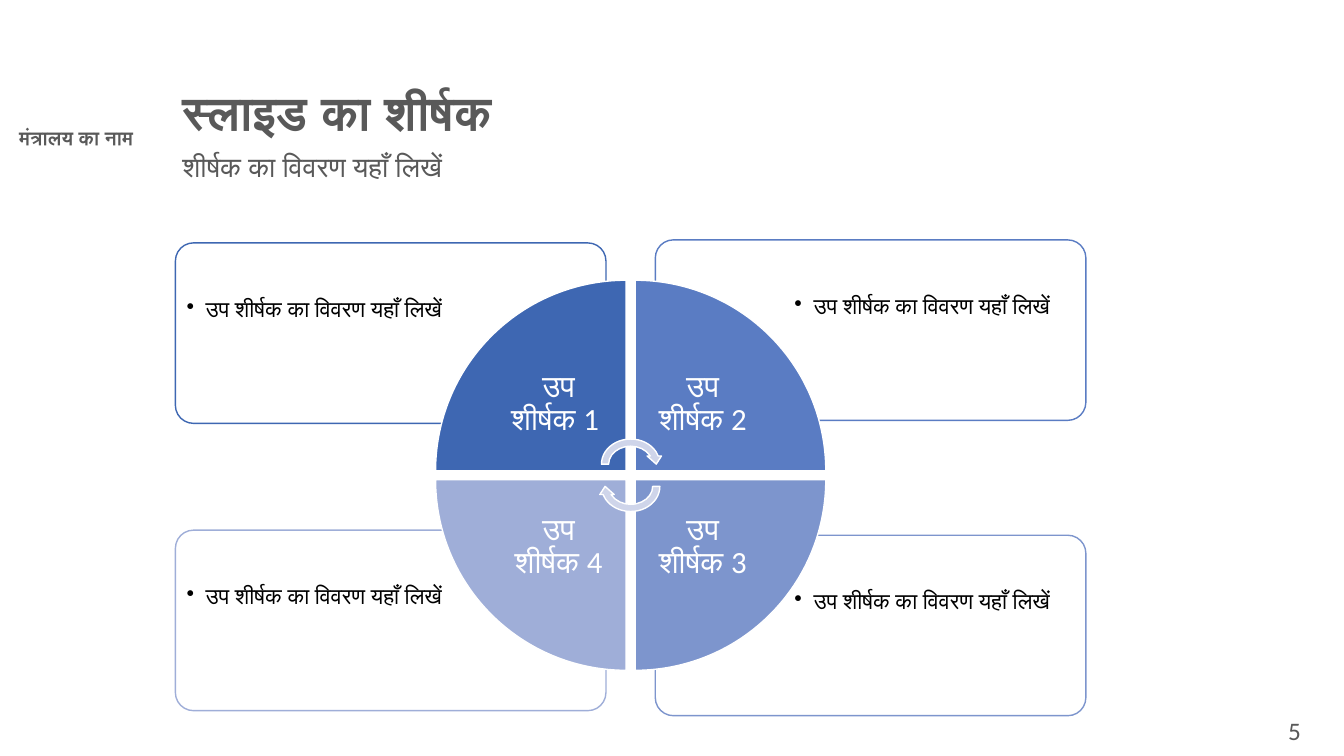
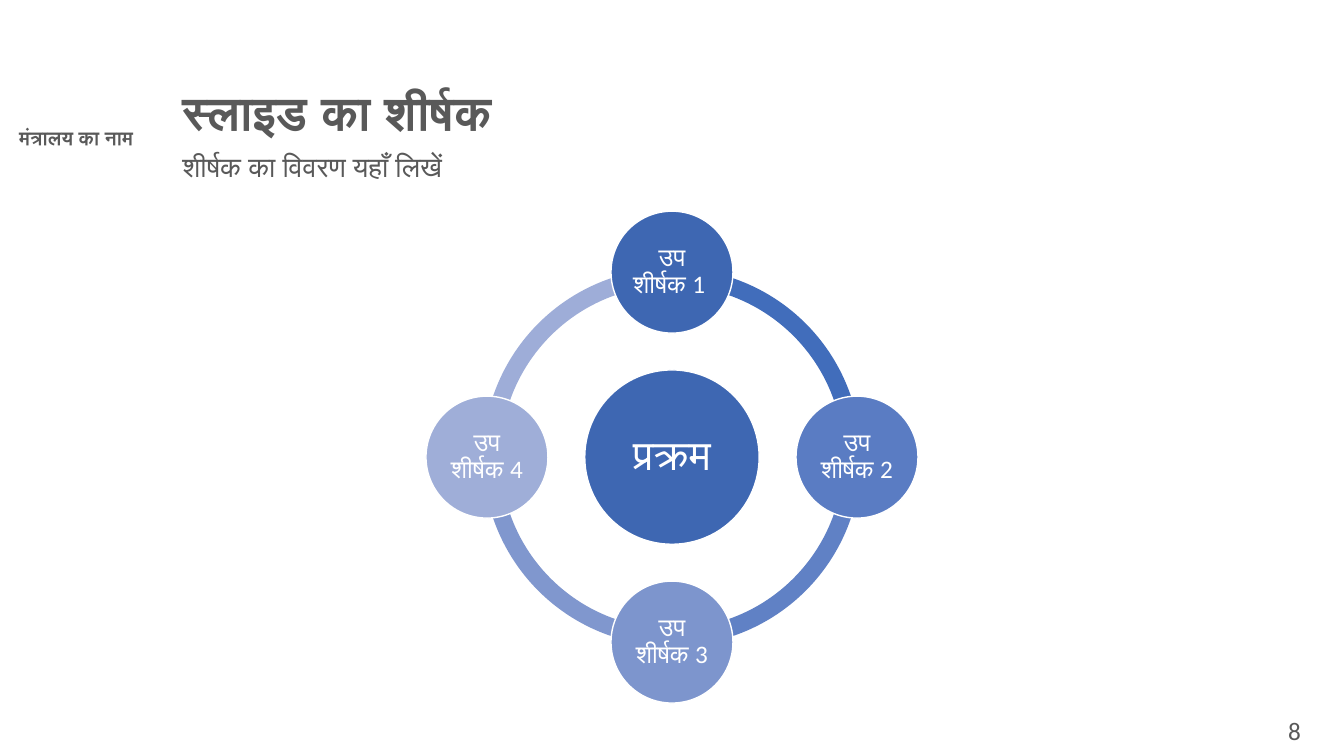
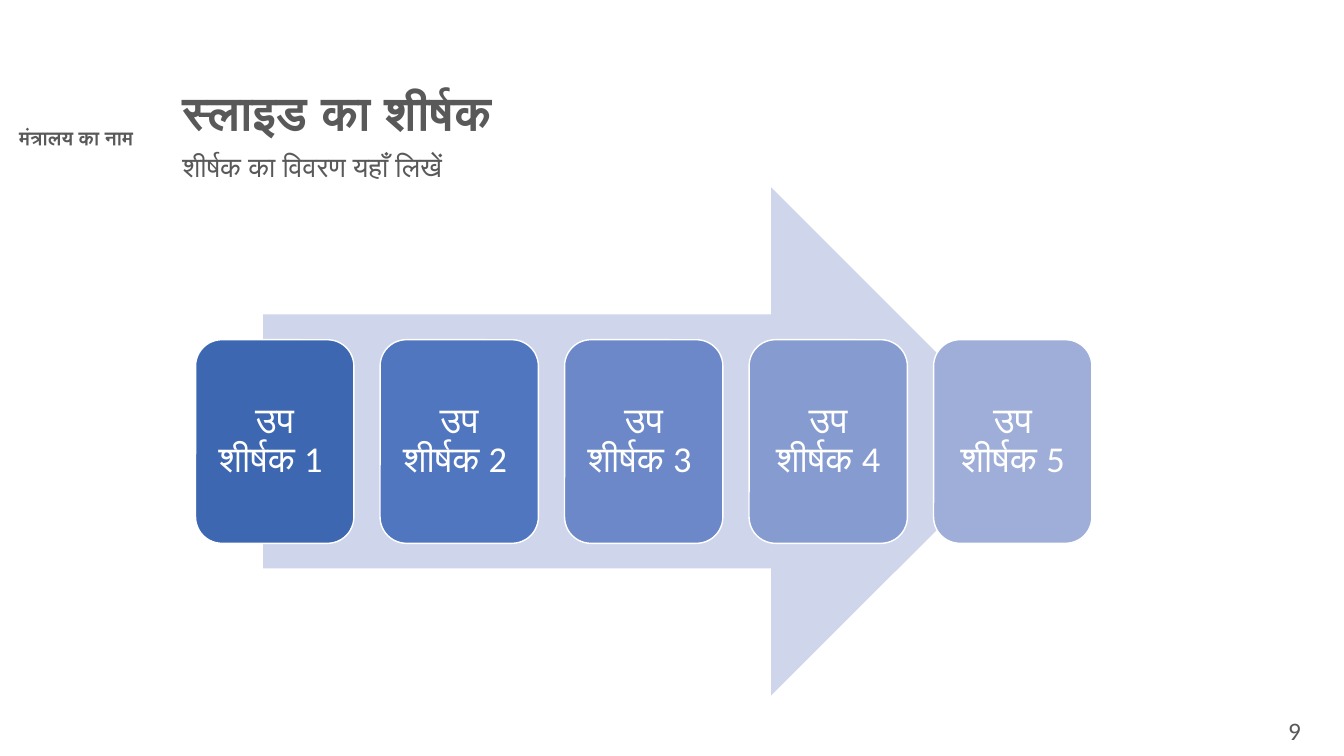
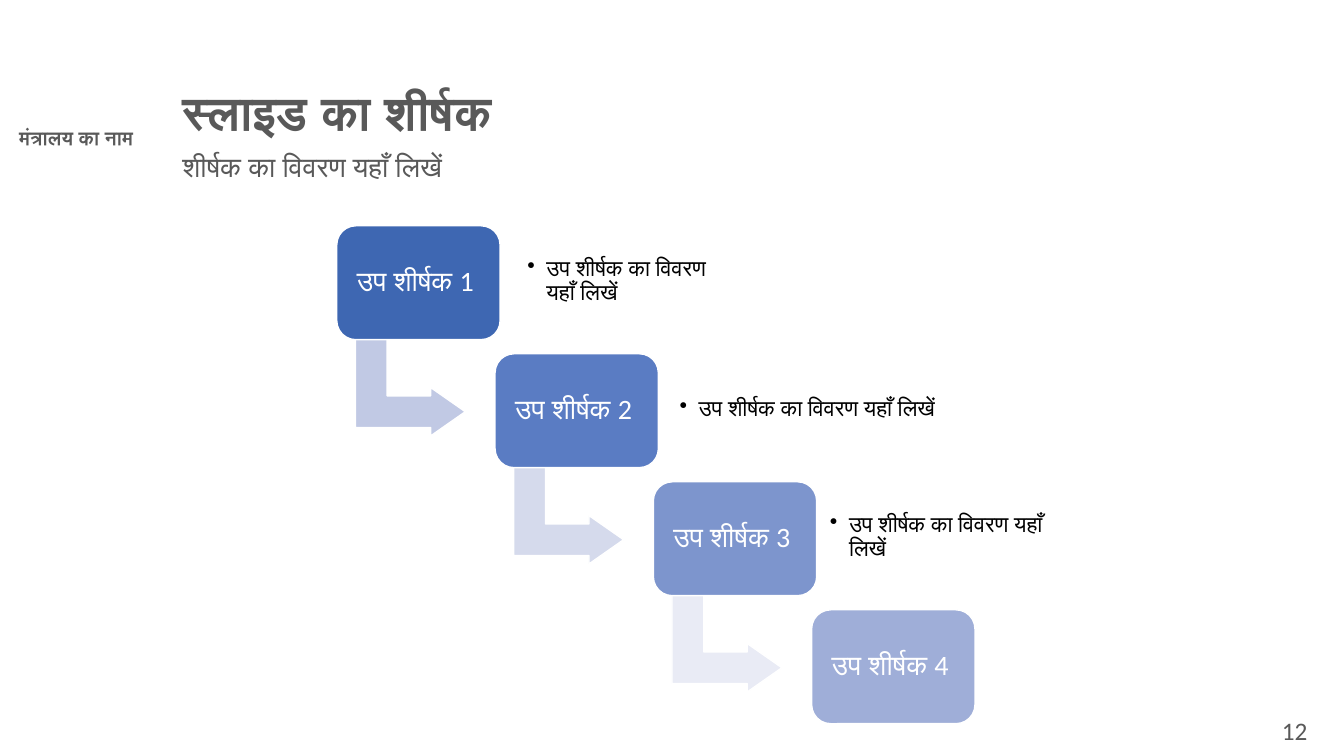
from dataclasses import dataclass
from typing import Optional

from lxml.etree import SubElement
from pptx import Presentation
from pptx.dml.color import RGBColor
from pptx.enum.shapes import MSO_SHAPE
from pptx.enum.text import MSO_ANCHOR, PP_ALIGN
from pptx.oxml.ns import qn
from pptx.shapes.autoshape import Shape
from pptx.slide import Slide
from pptx.util import Inches, Pt

# Shared colours
GREY = RGBColor(0x59, 0x59, 0x59)
BLACK = RGBColor(0x00, 0x00, 0x00)
WHITE = RGBColor(0xFF, 0xFF, 0xFF)
PALE = RGBColor(0xCF, 0xD5, 0xEA)
FOUR_BLUES = [RGBColor.from_string(code) for code in ("3E67B2", "5A7CC3", "7D95CD", "9FAED8")]
FIVE_BLUES = [RGBColor.from_string(code) for code in ("3E67B2", "5176C0", "6C88C8", "869BD0", "9FAED8")]
ARC_BLUES = [RGBColor.from_string(code) for code in ("416DBB", "6081C5", "8097CE", "9EADD8")]
ARROW_BLUES = [RGBColor.from_string(code) for code in ("C1C9E4", "D5DAEC", "E9EBF5")]

# Shared wording
MINISTRY = "मंत्रालय का नाम"
TITLE = "स्लाइड का शीर्षक"
SUBTITLE = "शीर्षक का विवरण यहाँ लिखें"
DETAIL = "उप शीर्षक का विवरण यहाँ लिखें"
HEADING = "उप शीर्षक"


@dataclass(frozen=True)
class Frame:
    """Left, top, width and height in inches."""
    left: float
    top: float
    width: float
    height: float

    def lengths(self) -> list[int]:
        return [Inches(side) for side in (self.left, self.top, self.width, self.height)]


@dataclass(frozen=True)
class DetailCard:
    card: Frame
    text: Frame
    anchor: MSO_ANCHOR


def write(box: Shape, text: str, *, size: float, color: RGBColor = WHITE, font: str = "Calibri",
          bold: bool = False, align: PP_ALIGN = PP_ALIGN.CENTER, spacing: float = 0.9,
          anchor: MSO_ANCHOR = MSO_ANCHOR.MIDDLE, inset: Optional[float] = None,
          bullet: bool = False) -> None:
    frame = box.text_frame
    frame.word_wrap = True
    frame.vertical_anchor = anchor
    if inset is not None:
        frame.margin_left = frame.margin_right = Inches(inset)
        frame.margin_top = frame.margin_bottom = Inches(inset)
    para = frame.paragraphs[0]
    if bullet:
        properties = para._p.get_or_add_pPr()
        properties.set("marL", str(Inches(0.19)))
        properties.set("indent", str(-Inches(0.19)))
        SubElement(properties, qn("a:buChar"), char="•")
    para.alignment = align
    para.line_spacing = spacing
    span = para.add_run()
    span.text = text
    span.font.size = Pt(size)
    span.font.name = font
    span.font.bold = bold
    span.font.color.rgb = color


def add_text(page: Slide, frame: Frame, text: str, **style) -> None:
    write(page.shapes.add_textbox(*frame.lengths()), text, **style)


def add_detail(page: Slide, frame: Frame, *, inset: float,
               anchor: MSO_ANCHOR = MSO_ANCHOR.MIDDLE) -> None:
    add_text(page, frame, DETAIL, size=16, color=BLACK, align=PP_ALIGN.LEFT,
             anchor=anchor, inset=inset, bullet=True)


def add_figure(page: Slide, kind: MSO_SHAPE, frame: Frame, fill: RGBColor, *,
               line: Optional[RGBColor] = WHITE, rotation: float = 0,
               adjust: tuple[float, ...] = (), opacity: int = 100) -> Shape:
    shape = page.shapes.add_shape(kind, *frame.lengths())
    shape.shadow.inherit = False
    shape.rotation = rotation
    for index, value in enumerate(adjust):
        shape.adjustments[index] = value
    shape.fill.solid()
    shape.fill.fore_color.rgb = fill
    if opacity < 100:
        tint = shape._element.spPr.find(qn("a:solidFill")).find(qn("a:srgbClr"))
        SubElement(tint, qn("a:alpha"), val=str(opacity * 1000))
    if line is None:
        shape.line.fill.background()
    else:
        shape.line.color.rgb = line
        shape.line.width = Pt(1)
    return shape


def add_page(deck: Presentation, number: int) -> Slide:
    """Start a blank page with the ministry name, titles and page number."""
    page = deck.slides.add_slide(deck.slide_layouts[6])
    top = MSO_ANCHOR.TOP
    add_text(page, Frame(-0.11, 1.23, 1.73, 0.35), MINISTRY, size=14, color=GREY,
             font="Arial", bold=True, anchor=top)
    add_text(page, Frame(1.71, 0.84, 9.61, 0.55), TITLE, size=34, color=GREY,
             bold=True, align=PP_ALIGN.LEFT, anchor=top)
    add_text(page, Frame(1.71, 1.47, 9.61, 0.63), SUBTITLE, size=20, color=GREY,
             align=PP_ALIGN.LEFT, anchor=top)
    add_text(page, Frame(12.34, 7.05, 1, 0.45), str(number), size=18, color=GREY,
             spacing=1.0, anchor=top)
    return page


def heading(number: int, spaced: bool) -> str:
    return f"{HEADING} {number}" + (" " if spaced else "")


def build_quadrants(deck: Presentation) -> None:
    page = add_page(deck, 5)
    # Detail cards, clockwise from top left
    cards = [
        DetailCard(Frame(left, top, 4.27, 1.79), Frame(text_left, top + drop, 2.91, 1.26), anchor)
        for left, top, text_left, drop, anchor in (
            (1.74, 2.41, 1.78, 0.04, MSO_ANCHOR.MIDDLE),
            (6.5, 2.38, 7.81, 0.04, MSO_ANCHOR.MIDDLE),
            (6.5, 5.31, 7.81, 0.48, MSO_ANCHOR.TOP),
            (1.74, 5.26, 1.78, 0.48, MSO_ANCHOR.TOP),
        )
    ]
    for item, color in reversed(list(zip(cards, FOUR_BLUES))):
        add_figure(page, MSO_SHAPE.ROUNDED_RECTANGLE, item.card, WHITE, line=color,
                   adjust=(0.1,), opacity=90)
        add_detail(page, item.text, inset=0.07, anchor=item.anchor)
    # Wedges, each a quarter turn after the one before
    for index, color in enumerate(FOUR_BLUES):
        on_left, on_top = index in (0, 3), index < 2
        wedge = Frame(4.32 if on_left else 6.3, 2.78 if on_top else 4.76, 1.89, 1.89)
        label = Frame(4.87 if on_left else 6.3, 3.34 if on_top else 4.76, 1.34, 1.34)
        add_figure(page, MSO_SHAPE.PIE_WEDGE, wedge, color, rotation=90 * index)
        add_text(page, label, heading(index + 1, index == 0), size=22, inset=0.17)
    # Turning arrows
    for top, rotation in ((4.32, 0), (4.54, 180)):
        add_figure(page, MSO_SHAPE.CIRCULAR_ARROW, Frame(5.93, top, 0.65, 0.57), PALE,
                   rotation=rotation)


def build_ring(deck: Presentation) -> None:
    page = add_page(deck, 8)
    center_x, center_y, reach = 6.665, 4.535, 1.835
    # Arcs; 54 adjustment units make a quarter turn
    for index, color in reversed(list(enumerate(ARC_BLUES))):
        start = (162 + 54 * index) % 216
        add_figure(page, MSO_SHAPE.BLOCK_ARC, Frame(4.79, 2.66, 3.75, 3.75), color, line=None,
                   adjust=(start, (start + 54) % 216, 0.046))
    # Hub and the four circles around it
    hub = add_figure(page, MSO_SHAPE.OVAL, Frame(5.8, 3.67, 1.73, 1.73), FOUR_BLUES[0])
    write(hub, "प्रक्रम", size=30, inset=0.04)
    directions = ((0, -1), (1, 0), (0, 1), (-1, 0))
    for index, ((across, down), color) in enumerate(zip(directions, FOUR_BLUES)):
        spot = Frame(center_x + across * reach - 0.605, center_y + down * reach - 0.605, 1.21, 1.21)
        circle = add_figure(page, MSO_SHAPE.OVAL, spot, color)
        write(circle, heading(index + 1, index == 0), size=18, inset=0.03)


def build_arrow(deck: Presentation) -> None:
    page = add_page(deck, 9)
    add_figure(page, MSO_SHAPE.RIGHT_ARROW, Frame(2.61, 1.86, 7.56, 5.04), PALE, line=None)
    for index, color in enumerate(FIVE_BLUES):
        stage = add_figure(page, MSO_SHAPE.ROUNDED_RECTANGLE,
                           Frame(1.94 + 1.83 * index, 3.37, 1.57, 2.02), color)
        write(stage, heading(index + 1, index < 3), size=26, inset=0.11)


def build_steps(deck: Presentation) -> None:
    page = add_page(deck, 12)
    details = ((5.14, 2.13), (6.65, 3.14), (8.14, 2.62))
    for index, color in enumerate(FOUR_BLUES):
        left, top = 3.34 + 1.57 * index, 2.24 + 1.27 * index
        has_next = index < len(details)
        if has_next:
            add_figure(page, MSO_SHAPE.BENT_UP_ARROW, Frame(left + 0.25, top + 1.06, 0.96, 1.09),
                       ARROW_BLUES[index], rotation=90, adjust=(0.328, 0.25, 0.358))
        step = add_figure(page, MSO_SHAPE.ROUNDED_RECTANGLE, Frame(left, top, 1.62, 1.13), color,
                          adjust=(0.167,))
        write(step, heading(index + 1, True), size=20, inset=0.08)
        if has_next:
            detail_left, width = details[index]
            add_detail(page, Frame(detail_left, top + 0.09, width, 0.92), inset=0.09)


def main() -> None:
    deck = Presentation()
    deck.slide_width, deck.slide_height = Inches(13.33), Inches(7.5)
    for build in (build_quadrants, build_ring, build_arrow, build_steps):
        build(deck)
    deck.save("out.pptx")


if __name__ == "__main__":
    main()
